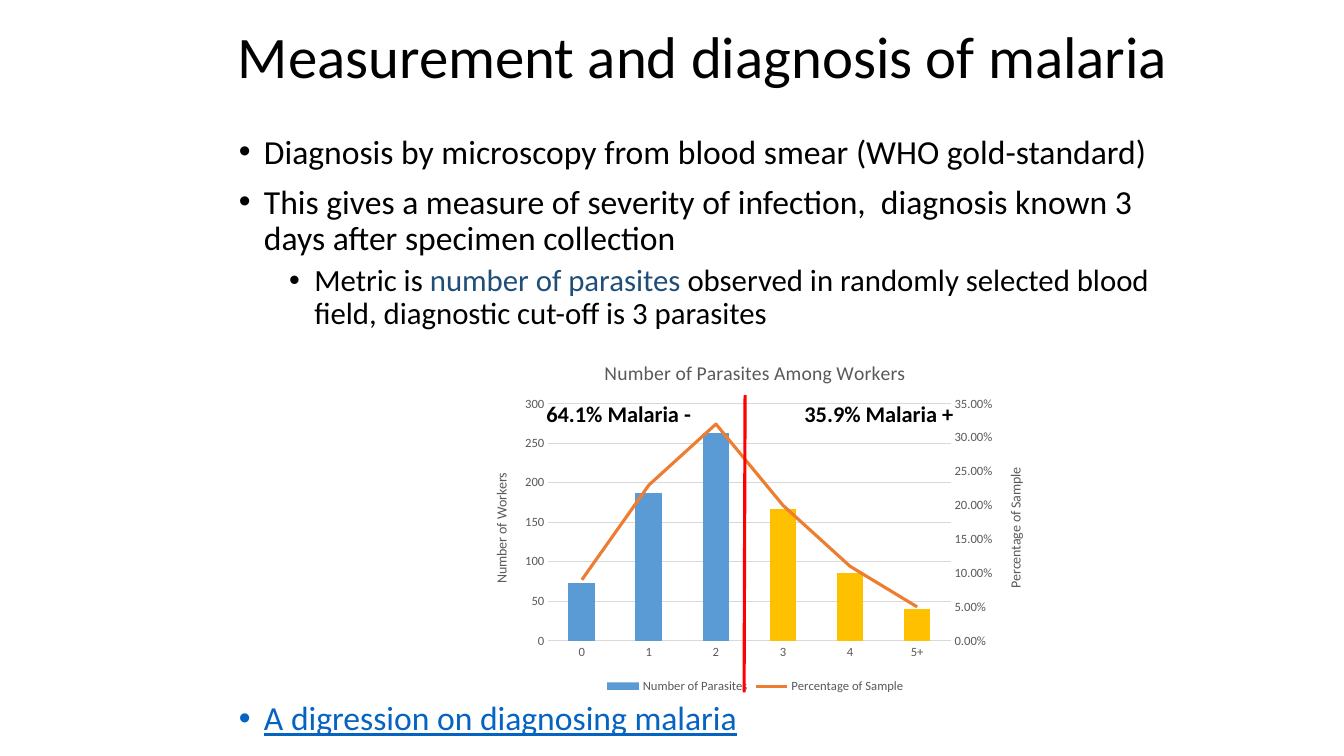
from dataclasses import dataclass
from lxml import etree
from pptx import Presentation
from pptx import util as u
from pptx.chart import axis as chart_axis
from pptx.chart.data import CategoryChartData
from pptx.dml.color import RGBColor
from pptx.enum import chart as ch, shapes, text
from pptx.oxml import parse_xml
from pptx.oxml.ns import nsdecls, qn

@dataclass(frozen=True)
class Theme:
    font: str = "Calibri"
    ink: str = "000000"
    emphasis: str = "1F4E79"
    link: str = "0563C1"
    grey: str = "595959"
    grid: str = "D9D9D9"
    negative: str = "5B9BD5"
    positive: str = "FFC000"
    curve: str = "ED7D31"
    cutoff: str = "FF0000"
    title: float = 42
    body: float = 24
    detail: float = 22
    label: float = 16
    chart_title: float = 14
    axis_title: float = 10
    tick: float = 9

THEME = Theme()
CATEGORIES = ["0", "1", "2", "3", "4", "5+"]
WORKERS = [73, 187, 263, 167, 86, 40]
SHARES = [0.09, 0.23, 0.32, 0.2, 0.11, 0.05]
DIAGNOSTIC_CUTOFF = 3
SHARE_PLOT = f"""<c:lineChart {nsdecls('c')}>
  <c:grouping val="standard"/><c:varyColors val="0"/>
  <c:marker val="1"/><c:axId val="5001"/><c:axId val="5002"/></c:lineChart>"""
SHARE_VALUE_AXIS = f"""<c:valAx {nsdecls('c')}>
  <c:axId val="5002"/><c:scaling><c:orientation val="minMax"/></c:scaling>
  <c:delete val="0"/><c:axPos val="r"/><c:numFmt formatCode="0.00%" sourceLinked="0"/>
  <c:tickLblPos val="nextTo"/><c:crossAx val="5001"/><c:crosses val="max"/></c:valAx>"""
SHARE_CATEGORY_AXIS = f"""<c:catAx {nsdecls('c')}>
  <c:axId val="5001"/><c:scaling><c:orientation val="minMax"/></c:scaling>
  <c:delete val="1"/><c:axPos val="b"/><c:crossAx val="5002"/></c:catAx>"""
PLOT_LAYOUT = f"""<c:layout {nsdecls('c')}><c:manualLayout>
  <c:layoutTarget val="inner"/><c:xMode val="edge"/><c:yMode val="edge"/>
  <c:x val="0.135"/><c:y val="0.17"/><c:w val="0.71"/><c:h val="0.67"/>
</c:manualLayout></c:layout>"""

def inches(*lengths):
    return [u.Inches(length) for length in lengths]

def style(font, size, color, bold=False):
    font.name, font.size, font.bold = THEME.font, u.Pt(size), bold
    font.color.rgb = RGBColor.from_string(color)

def set_fill(fill, color):
    fill.solid()
    fill.fore_color.rgb = RGBColor.from_string(color)

def set_line(line, color, width):
    line.color.rgb = RGBColor.from_string(color)
    line.width = u.Pt(width)

def add_box(page, box):
    frame = page.shapes.add_textbox(*inches(*box)).text_frame
    frame.word_wrap = True
    return frame

def add_title(page, box):
    frame = add_box(page, box)
    frame.vertical_anchor = text.MSO_ANCHOR.MIDDLE
    para = frame.paragraphs[0]
    para.text = "Measurement and diagnosis of malaria"
    para.alignment, para.line_spacing = text.PP_ALIGN.CENTER, 0.9
    style(para.runs[0].font, THEME.title, THEME.ink)

def add_bullet(para, spans, size, before, indent=0.25):
    """Fill a paragraph with (wording, colour) spans behind a hanging bullet."""
    para.line_spacing, para.space_before = 0.9, u.Pt(before)
    props = para._p.get_or_add_pPr()
    props.set("marL", str(u.Inches(indent)))
    props.set("indent", str(u.Inches(-0.25)))
    etree.SubElement(props, qn("a:buFont")).set("typeface", "Arial")
    etree.SubElement(props, qn("a:buChar")).set("char", "•")
    for wording, color in spans:
        span = para.add_run()
        span.text = wording
        style(span.font, size, color)

def add_body(page, box):
    frame = add_box(page, box)
    room_for_chart = 264.6
    bullets = [
        ([("Diagnosis by microscopy from blood smear (WHO gold-standard)", THEME.ink)],
         THEME.body, 10),
        ([("This gives a measure of severity of infection,  diagnosis known 3 days "
           "after specimen collection", THEME.ink)], THEME.body, 10),
        ([("Metric is ", THEME.ink), ("number of parasites ", THEME.emphasis),
          ("observed in randomly selected blood field, diagnostic cut-off is "
           "3 parasites", THEME.ink)], THEME.detail, 5, 0.75),
        ([("A digression on diagnosing malaria", THEME.link)], THEME.body, room_for_chart),
    ]
    for index, bullet in enumerate(bullets):
        para = frame.add_paragraph() if index else frame.paragraphs[0]
        add_bullet(para, *bullet)
    para.runs[0].font.underline = True

def set_chart_text(titled, wording, size):
    frame = titled.text_frame
    frame.text = wording
    style(frame.paragraphs[0].runs[0].font, size, THEME.grey)
    return frame

def format_axis(axis):
    axis.major_tick_mark = axis.minor_tick_mark = ch.XL_TICK_MARK.NONE
    style(axis.tick_labels.font, THEME.tick, THEME.grey)

def format_value_axis(axis, wording, top, step):
    format_axis(axis)
    axis.minimum_scale, axis.maximum_scale, axis.major_unit = 0, top, step
    axis.format.line.fill.background()
    frame = set_chart_text(axis.axis_title, wording, THEME.axis_title)
    frame._txBody.bodyPr.set("rot", "-5400000")
    frame._txBody.bodyPr.set("vert", "horz")

def move_shares_to_right_axis(chart):
    """Turn the second column series into a line with its own value axis."""
    columns = chart.plots[0]._element
    shares = chart.plots[0].series[1]._element
    for flag in shares.findall(qn("c:invertIfNegative")):
        shares.remove(flag)
    line_plot = parse_xml(SHARE_PLOT)
    columns.addnext(line_plot)
    line_plot.find(qn("c:varyColors")).addnext(shares)
    value_axis = parse_xml(SHARE_VALUE_AXIS)
    chart.value_axis._element.addnext(value_axis)
    value_axis.addnext(parse_xml(SHARE_CATEGORY_AXIS))
    curve = chart.plots[1].series[0]
    curve.smooth = False
    curve.marker.style = ch.XL_MARKER_STYLE.NONE
    set_line(curve.format.line, THEME.curve, 2.25)
    return chart_axis.ValueAxis(value_axis)

def add_parasite_chart(page, box):
    data = CategoryChartData()
    data.categories = CATEGORIES
    data.add_series("Number of Parasites", WORKERS, "General")
    data.add_series("Percentage of Sample", SHARES, "0.00%")
    chart = page.shapes.add_chart(
        ch.XL_CHART_TYPE.COLUMN_CLUSTERED, *inches(*box), data).chart
    style(chart.font, THEME.axis_title, THEME.ink)
    set_chart_text(chart.chart_title, "Number of Parasites Among Workers", THEME.chart_title)
    chart.has_legend = True
    chart.legend.position = ch.XL_LEGEND_POSITION.BOTTOM
    chart.legend.include_in_layout = False
    style(chart.legend.font, THEME.tick, THEME.grey)
    columns = chart.plots[0]
    columns.gap_width, columns.vary_by_categories = 150, False
    workers = columns.series[0]
    set_fill(workers.format.fill, THEME.negative)
    for index in range(DIAGNOSTIC_CUTOFF, len(CATEGORIES)):
        set_fill(workers.points[index].format.fill, THEME.positive)
    format_axis(chart.category_axis)
    set_line(chart.category_axis.format.line, THEME.grid, 0.75)
    format_value_axis(chart.value_axis, "Number of Workers", 300, 50)
    set_line(chart.value_axis.major_gridlines.format.line, THEME.grid, 0.75)
    share_axis = move_shares_to_right_axis(chart)
    format_value_axis(share_axis, "Percentage of Sample", 0.35, 0.05)
    plot_area = columns._element.getparent()
    for layout in plot_area.findall(qn("c:layout")):
        plot_area.remove(layout)
    plot_area.insert(0, parse_xml(PLOT_LAYOUT))

def add_cutoff(page, box):
    """Draw the diagnostic cut-off with the share of workers on either side."""
    left, top, width, height = box
    line = page.shapes.add_connector(shapes.MSO_CONNECTOR.STRAIGHT, *inches(
        left + 2.07, top, left + 2.06, top + height))
    set_line(line.line, THEME.cutoff, 2.25)
    etree.SubElement(line._element.spPr, qn("a:effectLst"))
    for label_left, wording in ((left + width - 1.92, "35.9% Malaria +"),
                                (left, "64.1% Malaria -")):
        frame = add_box(page, (label_left, top, 1.92, 0.37))
        frame.text = wording
        style(frame.paragraphs[0].runs[0].font, THEME.label, THEME.ink, bold=True)

def main():
    deck = Presentation()
    deck.slide_width, deck.slide_height = inches(13.33, 7.5)
    page = deck.slides.add_slide(deck.slide_layouts[6])
    add_title(page, (2.08, -0.14, 9.78, 1.46))
    add_body(page, (2.27, 1.29, 9.44, 6.3))
    add_parasite_chart(page, (4.68, 3.41, 5.62, 3.51))
    add_cutoff(page, (5.32, 3.92, 4.48, 2.95))
    deck.save("out.pptx")

if __name__ == "__main__":
    main()
